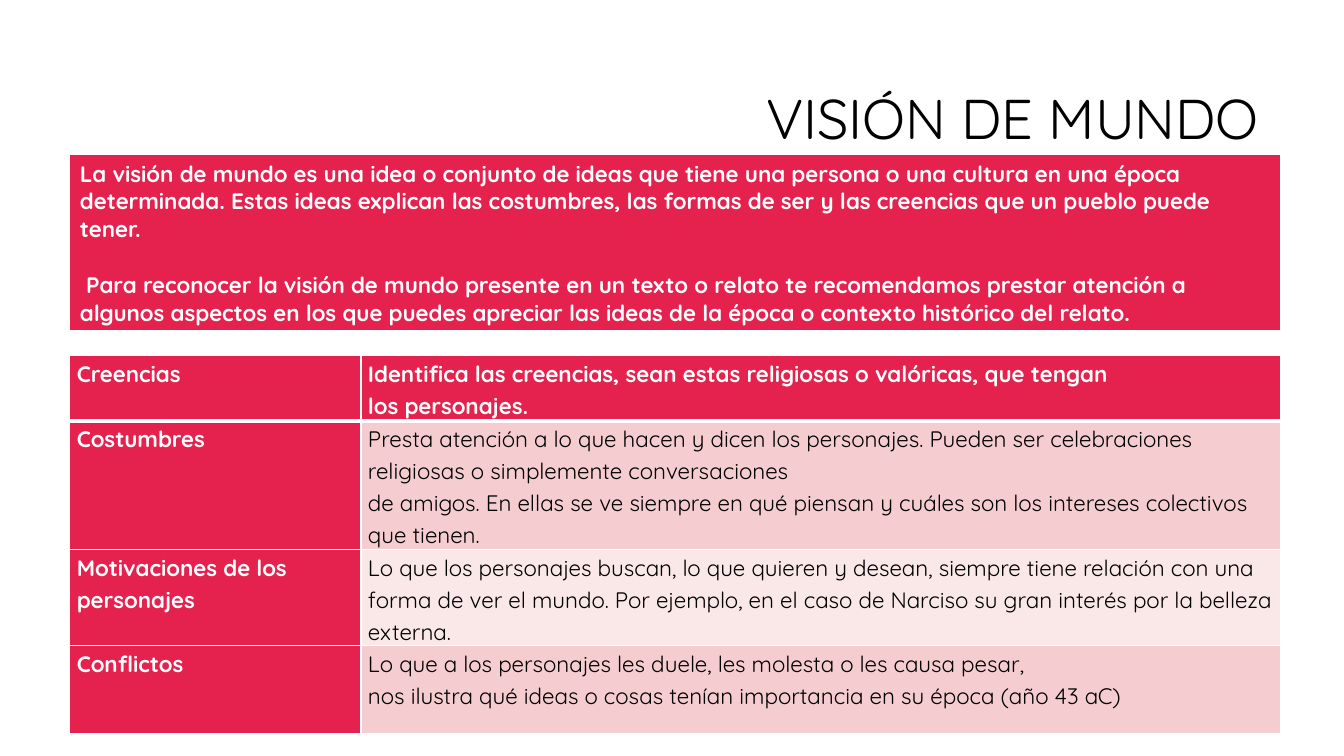
from lxml import etree
from pptx import Presentation
from pptx.dml.color import RGBColor
from pptx.enum.text import MSO_ANCHOR, PP_ALIGN
from pptx.oxml.ns import qn
from pptx.util import Pt

RIGHT = PP_ALIGN.RIGHT
TOP = MSO_ANCHOR.TOP
MIDDLE = MSO_ANCHOR.MIDDLE

RED = RGBColor(0xE5, 0x22, 0x4E)
ROSE = RGBColor(0xF5, 0xCD, 0xD0)
BLUSH = RGBColor(0xFA, 0xE8, 0xE9)
WHITE = RGBColor(0xFF, 0xFF, 0xFF)
BLACK = RGBColor(0x00, 0x00, 0x00)

FONT = "Quicksand"
LEFT = Pt(49.9)
WIDTHS = [208, 656.6]
HEIGHTS = [46.7, 78.5, 62.6, 62.6]

INTRO = (
    "La visión de mundo es una idea o conjunto de ideas que tiene una persona "
    "o una cultura en una época determinada. Estas ideas explican las costumbres, "
    "las formas de ser y las creencias que un pueblo puede tener.\n"
    " Para reconocer la visión de mundo presente en un texto o relato te "
    "recomendamos prestar atención a algunos aspectos en los que puedes apreciar "
    "las ideas de la época o contexto histórico del relato."
)
ASPECTS = [
    ("Creencias",
     "Identifica las creencias, sean estas religiosas o valóricas, que tengan\n"
     "los personajes."),
    ("Costumbres",
     "Presta atención a lo que hacen y dicen los personajes. Pueden ser "
     "celebraciones religiosas o simplemente conversaciones\n"
     "de amigos. En ellas se ve siempre en qué piensan y cuáles son los "
     "intereses colectivos que tienen."),
    ("Motivaciones de los personajes",
     "Lo que los personajes buscan, lo que quieren y desean, siempre tiene "
     "relación con una forma de ver el mundo. Por ejemplo, en el caso de Narciso "
     "su gran interés por la belleza externa."),
    ("Conflictos",
     "Lo que a los personajes les duele, les molesta o les causa pesar,\n"
     "nos ilustra qué ideas o cosas tenían importancia en su época (año 43 aC)"),
]


def style(frame, size, color, bold, spacing):
    for para in frame.paragraphs:
        para.line_spacing = spacing
        for run in para.runs:
            font = run.font
            font.name = FONT
            font.size = Pt(size)
            font.bold = bold
            font.color.rgb = color


def add_edges(cell, base):
    """Draw white cell borders; base is the bottom width in points."""
    props = cell._tc.get_or_add_tcPr()
    for side, width in (("L", 1), ("R", 1), ("T", 1), ("B", base)):
        line = etree.SubElement(props, qn(f"a:ln{side}"), w=str(Pt(width)))
        fill = etree.SubElement(line, qn("a:solidFill"))
        etree.SubElement(fill, qn("a:srgbClr"), val=str(WHITE))


def fill_cell(cell, text, fill, base, spacing):
    add_edges(cell, base)
    cell.fill.solid()
    cell.fill.fore_color.rgb = fill
    cell.vertical_anchor = TOP
    cell.text_frame.text = text
    strong = fill == RED
    style(cell.text_frame, 16, WHITE if strong else BLACK, strong, spacing)


def add_grid(slide, top, widths, heights):
    frame = slide.shapes.add_table(
        len(heights), len(widths), LEFT, Pt(top), Pt(sum(widths)), Pt(sum(heights)))
    table = frame.table
    for column, width in zip(table.columns, widths):
        column.width = Pt(width)
    for row, height in zip(table.rows, heights):
        row.height = Pt(height)
    return table


def set_title(slide):
    title = slide.shapes.title
    title.left, title.top = Pt(228.2), Pt(60.5)
    title.width, title.height = Pt(678.2), Pt(51.8)
    frame = title.text_frame
    frame.text = "VISIÓN DE MUNDO"
    frame.word_wrap = True
    frame.vertical_anchor = MIDDLE
    frame.paragraphs[0].alignment = RIGHT
    style(frame, 40, BLACK, False, 0.9)


def add_intro(slide):
    cell = add_grid(slide, 110.5, [sum(WIDTHS)], [125]).cell(0, 0)
    fill_cell(cell, INTRO, RED, 3, 1.0)
    cell.text_frame.paragraphs[1].space_before = Pt(20)


def add_aspects(slide):
    table = add_grid(slide, 254.2, WIDTHS, HEIGHTS)
    bands = [RED, ROSE, BLUSH, ROSE]
    for row, (texts, band) in enumerate(zip(ASPECTS, bands)):
        for col, (text, fill) in enumerate(zip(texts, (RED, band))):
            cell = table.cell(row, col)
            cell.margin_left = cell.margin_right = Pt(5)
            cell.margin_top = cell.margin_bottom = Pt(0)
            fill_cell(cell, text, fill, 1 if row else 3, 1.15)


def main():
    deck = Presentation()
    deck.slide_width, deck.slide_height = Pt(960), Pt(540)
    slide = deck.slides.add_slide(deck.slide_layouts[5])
    set_title(slide)
    add_aspects(slide)
    add_intro(slide)
    deck.save("out.pptx")


if __name__ == "__main__":
    main()
